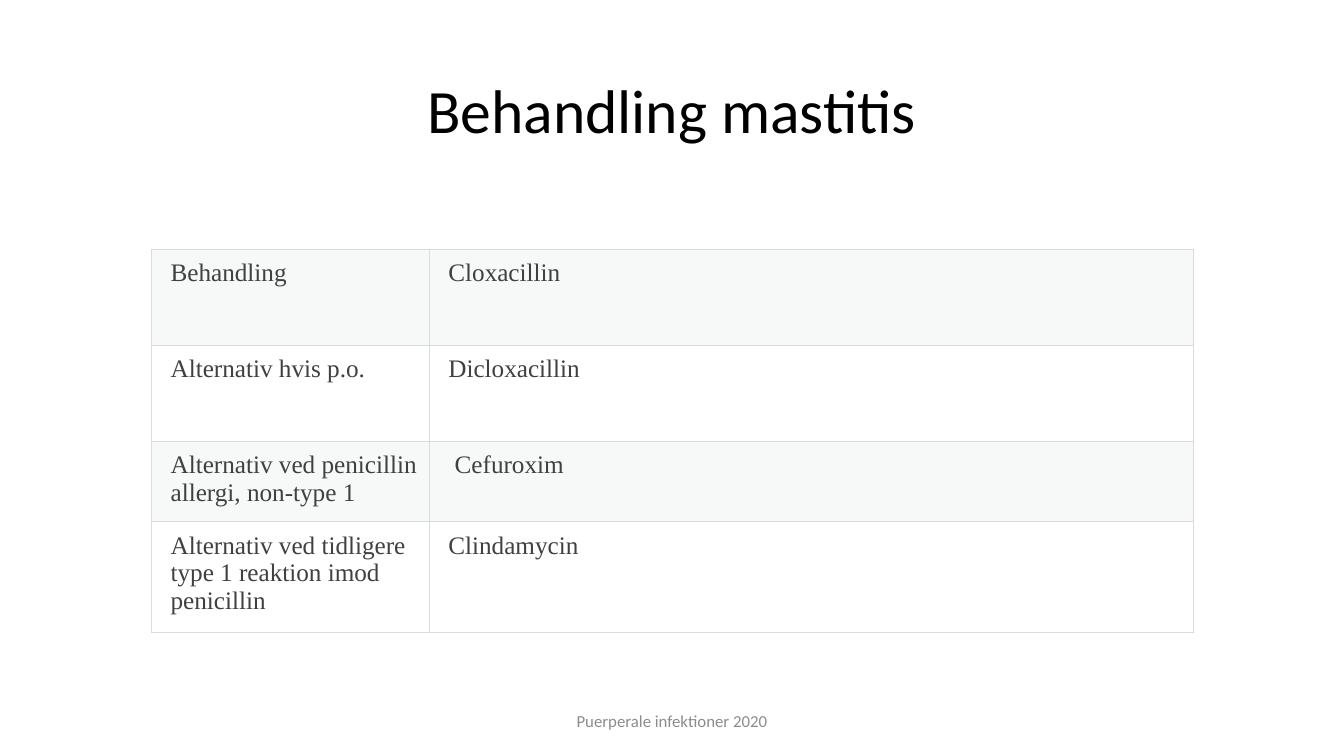
from dataclasses import dataclass

from lxml.etree import SubElement
from pptx import Presentation
from pptx.dml.color import RGBColor
from pptx.enum.text import MSO_ANCHOR, PP_ALIGN
from pptx.oxml import parse_xml
from pptx.oxml.ns import nsdecls, qn
from pptx.util import Cm, Pt

LINE = "D8DCDC"
BAND = "D8DEDC"
COLUMNS = (7, 19.25)
BLANK_ROW = 1.19


@dataclass
class Label:
    text: str
    left: float
    top: float
    width: float
    height: float
    size: float
    color: str
    spacing: float = 1.0


@dataclass
class Treatment:
    situation: str
    drug: str
    height: float
    banded: bool


LABELS = [
    Label("Behandling mastitis", 2.33, 1.01, 29.21, 3.68, 44, "000000", 0.9),
    Label("Puerperale infektioner 2020", 11.22, 17.65, 11.43, 1.02, 12, "8C8C8C"),
]

TREATMENTS = [
    Treatment("Behandling", "Cloxacillin", 2.42, True),
    Treatment("Alternativ hvis p.o.", "Dicloxacillin", 2.42, False),
    Treatment("Alternativ ved penicillin allergi, non-type 1", "\u00a0Cefuroxim".replace("\u00a0", " "), 1.8, True),
    Treatment("Alternativ ved tidligere type 1 reaktion imod penicillin", "Clindamycin", 2.42, False),
]


def rgb(color: str) -> RGBColor:
    return RGBColor.from_string(color)


def set_font(p, name: str, size: float, color: str) -> None:
    p.font.name = name
    p.font.size = Pt(size)
    p.font.color.rgb = rgb(color)


def add_label(s, label: Label) -> None:
    sp = s.shapes.add_textbox(Cm(label.left), Cm(label.top), Cm(label.width), Cm(label.height))
    tf = sp.text_frame
    tf.word_wrap = True
    tf.vertical_anchor = MSO_ANCHOR.MIDDLE
    p = tf.paragraphs[0]
    p.text = label.text
    p.alignment = PP_ALIGN.CENTER
    p.line_spacing = label.spacing
    set_font(p, "Calibri", label.size, label.color)


def set_borders(cell, sides: str) -> None:
    tc_pr = cell._tc.get_or_add_tcPr()
    for i, side in enumerate(sides):
        tc_pr.insert(i, parse_xml(
            f'<a:ln{side} {nsdecls("a")} w="{Pt(0.75)}"><a:solidFill>'
            f'<a:srgbClr val="{LINE}"/></a:solidFill></a:ln{side}>'))


def fill_cell(cell, text: str, banded: bool) -> None:
    cell.margin_left = Cm(0.48)
    cell.margin_right = 0
    cell.margin_top = cell.margin_bottom = Cm(0.25)
    p = cell.text_frame.paragraphs[0]
    p.text = text
    set_font(p, "Times New Roman", 18, "404040")
    if banded:
        cell.fill.solid()
        cell.fill.fore_color.rgb = rgb(BAND)
        clr = cell._tc.tcPr.find(f'{qn("a:solidFill")}/{qn("a:srgbClr")}')
        SubElement(clr, qn("a:alpha"), val="20000")
    else:
        cell.fill.background()
    set_borders(cell, "LRTB")


def add_treatments(s, treatments: list[Treatment]) -> None:
    heights = [BLANK_ROW] + [t.height for t in treatments]
    table = s.shapes.add_table(
        len(heights), len(COLUMNS), Cm(3.82), Cm(5.09), Cm(sum(COLUMNS)), Cm(sum(heights))).table
    table.first_row = table.horz_banding = False
    for column, width in zip(table.columns, COLUMNS):
        column.width = Cm(width)
    for row, height in zip(table.rows, heights):
        row.height = Cm(height)
    for cell in table.rows[0].cells:
        cell.fill.background()
        set_borders(cell, "B")
    table.cell(0, 0).merge(table.cell(0, 1))
    for i, t in enumerate(treatments, 1):
        for j, text in enumerate((t.situation, t.drug)):
            fill_cell(table.cell(i, j), text, t.banded)


def main() -> None:
    prs = Presentation()
    prs.slide_width, prs.slide_height = Cm(33.87), Cm(19.05)
    s = prs.slides.add_slide(prs.slide_layouts[6])
    for label in LABELS:
        add_label(s, label)
    add_treatments(s, TREATMENTS)
    prs.save("out.pptx")


if __name__ == "__main__":
    main()
